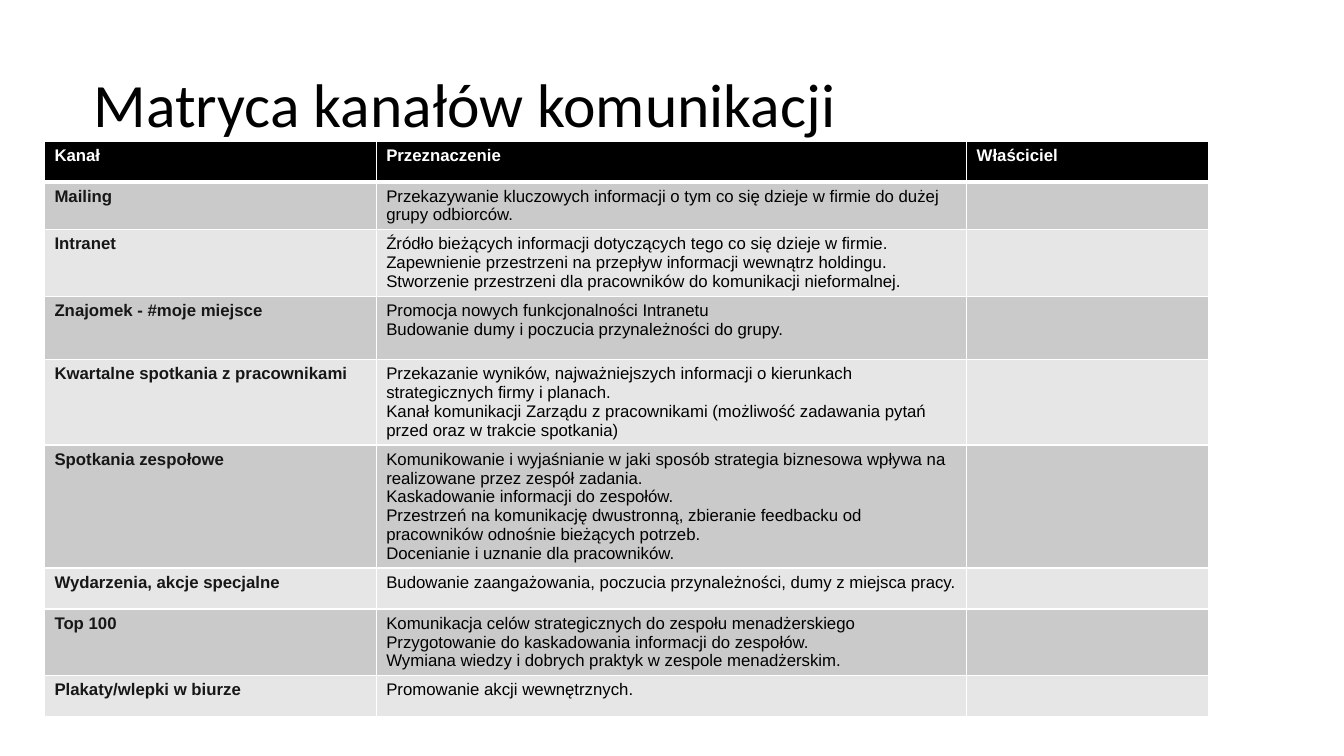
from dataclasses import dataclass

from lxml import etree
from pptx import Presentation
from pptx import util as u
from pptx.dml.color import RGBColor
from pptx.enum import text
from pptx.oxml import ns

# Content
TITLE = "Matryca kanałów komunikacji"
HEADINGS = ("Kanał", "Przeznaczenie", "Właściciel")
# Channel, paragraphs of its purpose, row height in cm
CHANNELS = [
    ("Mailing", [
        "Przekazywanie kluczowych informacji o tym co się dzieje w firmie do dużej grupy odbiorców.",
    ], 1.2),
    ("Intranet", [
        "Źródło bieżących informacji dotyczących tego co się dzieje w firmie.",
        "Zapewnienie przestrzeni na przepływ informacji wewnątrz holdingu.",
        "Stworzenie przestrzeni dla pracowników do komunikacji nieformalnej.",
    ], 1.68),
    ("Znajomek - #moje miejsce", [
        "Promocja nowych funkcjonalności Intranetu",
        "Budowanie dumy i poczucia przynależności do grupy.",
    ], 1.6),
    ("Kwartalne spotkania z pracownikami", [
        "Przekazanie wyników, najważniejszych informacji o kierunkach strategicznych firmy i planach.",
        "Kanał komunikacji Zarządu z pracownikami (możliwość zadawania pytań przed oraz w trakcie spotkania)",
    ], 2.14),
    ("Spotkania zespołowe", [
        "Komunikowanie i wyjaśnianie w jaki sposób strategia biznesowa wpływa na realizowane przez zespół zadania.",
        "Kaskadowanie informacji do zespołów.\n"
        "Przestrzeń na komunikację dwustronną, zbieranie feedbacku od pracowników odnośnie bieżących potrzeb.",
        "Docenianie i uznanie dla pracowników.",
    ], 3.1),
    ("Wydarzenia, akcje specjalne", [
        "Budowanie zaangażowania, poczucia przynależności, dumy z miejsca pracy.",
    ], 1.02),
    ("Top 100", [
        "Komunikacja celów strategicznych do zespołu menadżerskiego",
        "Przygotowanie do kaskadowania informacji do zespołów.",
        "Wymiana wiedzy i dobrych praktyk w zespole menadżerskim.",
    ], 1.68),
    ("Plakaty/wlepki w biurze", ["Promowanie akcji wewnętrznych."], 1.02),
]

# Measures in cm
TITLE_BOX = (2.11, 1.63, 29.21, 2.16)
TABLE_CORNER = (1.12, 3.56)
COLUMN_WIDTHS = (8.36, 14.88, 6.09)
HEADING_HEIGHT = 1.02


@dataclass(frozen=True)
class Theme:
    title_font: str = "Calibri"
    body_font: str = "Arial"
    title_size: int = 44
    body_size: int = 12
    black: str = "000000"
    white: str = "FFFFFF"
    channel: str = "181717"
    bands: tuple = ("CACACA", "E6E6E6")
    border: int = 1
    heading_border: int = 3


THEME = Theme()


def set_font(paragraph, name, size, color, bold=False):
    font = paragraph.font
    font.name, font.size, font.bold = name, u.Pt(size), bold
    font.color.rgb = RGBColor.from_string(color)


def set_borders(cell, bottom):
    widths = {"L": THEME.border, "R": THEME.border, "T": THEME.border, "B": bottom}
    properties = cell._tc.get_or_add_tcPr()
    for index, (side, width) in enumerate(widths.items()):
        line = etree.Element(ns.qn(f"a:ln{side}"), w=str(u.Pt(width)))
        fill = etree.SubElement(line, ns.qn("a:solidFill"))
        etree.SubElement(fill, ns.qn("a:srgbClr"), val=THEME.white)
        properties.insert(index, line)


def fill_cell(cell, paragraphs, background, color, bold=False, bottom=THEME.border):
    cell.fill.solid()
    cell.fill.fore_color.rgb = RGBColor.from_string(background)
    set_borders(cell, bottom)
    frame = cell.text_frame
    for index, wording in enumerate(paragraphs):
        paragraph = frame.add_paragraph() if index else frame.paragraphs[0]
        paragraph.text = wording
        set_font(paragraph, THEME.body_font, THEME.body_size, color, bold)


def add_title(slide):
    title = slide.shapes.title
    title.left, title.top, title.width, title.height = map(u.Cm, TITLE_BOX)
    frame = title.text_frame
    frame.text = TITLE
    frame.auto_size = text.MSO_AUTO_SIZE.NONE
    frame.vertical_anchor = text.MSO_ANCHOR.MIDDLE
    heading = frame.paragraphs[0]
    heading.alignment = text.PP_ALIGN.LEFT
    heading.line_spacing = 0.9
    set_font(heading, THEME.title_font, THEME.title_size, THEME.black)


def add_matrix(slide):
    heights = [HEADING_HEIGHT] + [height for _, _, height in CHANNELS]
    left, top = TABLE_CORNER
    matrix = slide.shapes.add_table(
        len(heights), len(HEADINGS), u.Cm(left), u.Cm(top),
        u.Cm(sum(COLUMN_WIDTHS)), u.Cm(sum(heights))).table
    for column, width in zip(matrix.columns, COLUMN_WIDTHS):
        column.width = u.Cm(width)
    for row, height in zip(matrix.rows, heights):
        row.height = u.Cm(height)

    # Heading row
    for column, heading in enumerate(HEADINGS):
        fill_cell(matrix.cell(0, column), [heading], THEME.black, THEME.white,
                  bold=True, bottom=THEME.heading_border)

    # Channel rows in alternating bands, owner left open
    for row, (channel, purpose, _) in enumerate(CHANNELS, start=1):
        band = THEME.bands[(row - 1) % 2]
        fill_cell(matrix.cell(row, 0), [channel], band, THEME.channel, bold=True)
        fill_cell(matrix.cell(row, 1), purpose, band, THEME.black)
        fill_cell(matrix.cell(row, 2), [], band, THEME.black)


def main():
    deck = Presentation()
    deck.slide_width, deck.slide_height = u.Cm(33.87), u.Cm(19.05)
    slide = deck.slides.add_slide(deck.slide_layouts[5])
    add_title(slide)
    add_matrix(slide)
    deck.save("out.pptx")


if __name__ == "__main__":
    main()
